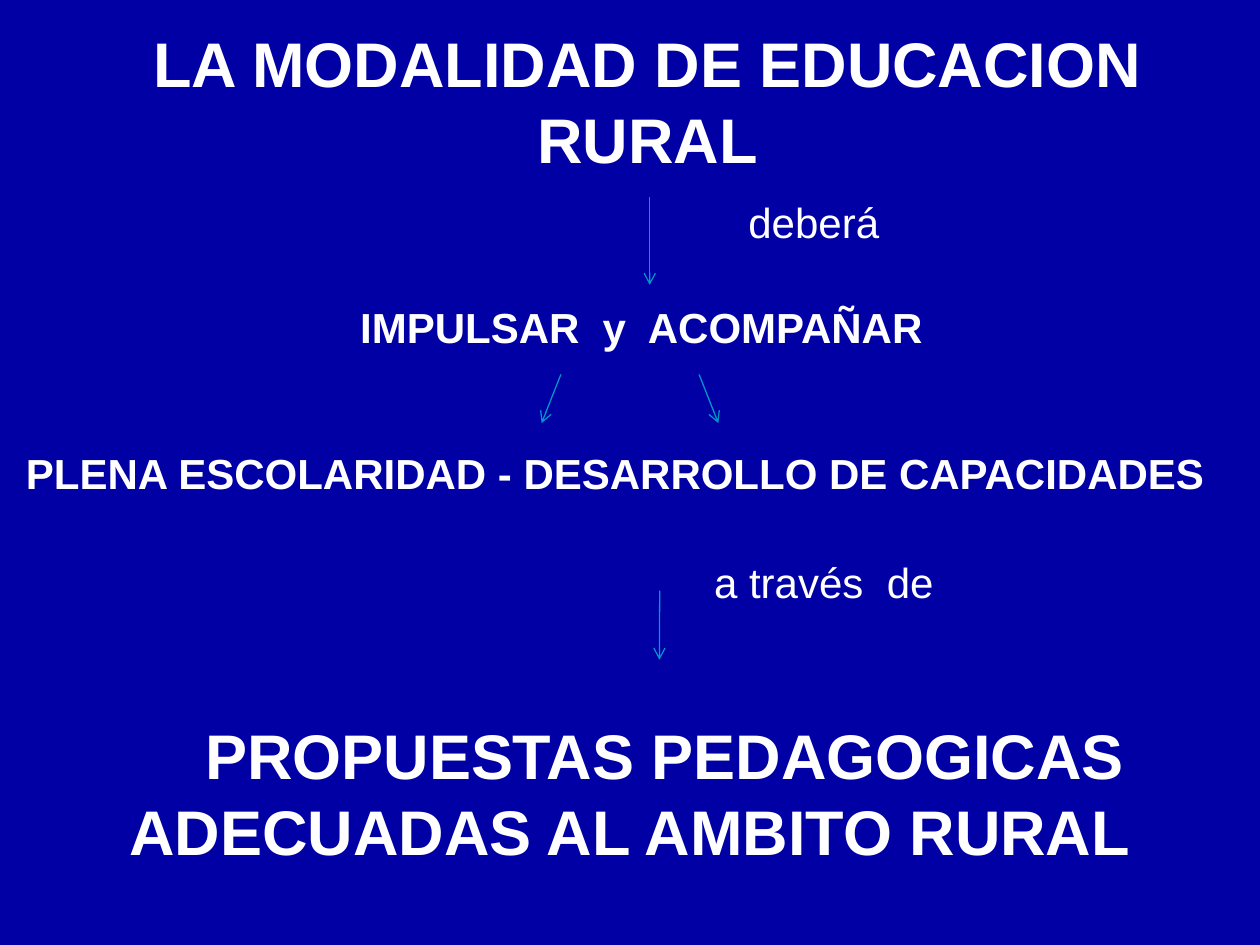
from lxml import etree
from pptx import Presentation
from pptx.dml.color import RGBColor
from pptx.enum.shapes import MSO_CONNECTOR
from pptx.enum.text import MSO_ANCHOR, MSO_AUTO_SIZE, PP_ALIGN
from pptx.oxml.ns import qn
from pptx.util import Pt

STRAIGHT = MSO_CONNECTOR.STRAIGHT
TOP = MSO_ANCHOR.TOP
NO_FIT = MSO_AUTO_SIZE.NONE
LEFT, CENTER = PP_ALIGN.LEFT, PP_ALIGN.CENTER

COLORS = {"background": "0000A4", "text": "FFFFFF", "arrow": "0096C8"}
TITLE_ONLY = 5

HEADING = {"size": Pt(36), "bold": True}
STEP = {"size": Pt(24), "bold": True}
LINK = {"size": Pt(24), "bold": False}
HEADING_LINE = Pt(43.4)

# Each line: text, font, paragraph format, left margin, first-line indent
TITLE_LINES = [
    ("LA MODALIDAD DE EDUCACION RURAL", HEADING,
     {"alignment": CENTER, "line_spacing": HEADING_LINE}, 0, 0),
    ("deberá", LINK,
     {"alignment": CENTER, "line_spacing": Pt(40.5)}, 190, 0),
]
BODY_LINES = [
    ("IMPULSAR  y  ACOMPAÑAR", STEP, {"alignment": CENTER}, 13, 0),
    ("PLENA ESCOLARIDAD - DESARROLLO DE CAPACIDADES", STEP,
     {"alignment": LEFT, "space_before": Pt(54.8)}, 7.8, 0),
    ("a través  de", LINK,
     {"alignment": LEFT, "space_before": Pt(33.4)}, 401, 0),
    ("PROPUESTAS PEDAGOGICAS ADECUADAS AL AMBITO RURAL", HEADING,
     {"alignment": CENTER, "space_before": Pt(62.8),
      "line_spacing": HEADING_LINE}, 0, 40),
]

# Start x, start y, end x, end y
ARROWS = [
    (371.3, 112.5, 371.3, 162.8),
    (320.5, 214, 309.5, 241.8),
    (399.5, 214, 410.5, 241.8),
    (377, 337.5, 376.8, 377),
]


def color(name):
    return RGBColor.from_string(COLORS[name])


def set_values(target, values):
    for name, value in values.items():
        setattr(target, name, value)


def write_lines(shape, lines, top_inset):
    frame = shape.text_frame
    set_values(frame, {"word_wrap": True, "auto_size": NO_FIT,
                       "vertical_anchor": TOP, "margin_top": Pt(top_inset),
                       "margin_bottom": 0})
    for index, (text, font, layout, margin, indent) in enumerate(lines):
        para = frame.paragraphs[0] if index == 0 else frame.add_paragraph()
        set_values(para, {"space_before": Pt(0), "line_spacing": 1.0, **layout})
        properties = para._p.get_or_add_pPr()
        properties.set("marL", str(Pt(margin)))
        properties.set("indent", str(Pt(indent)))
        span = para.add_run()
        span.text = text
        set_values(span.font, {"name": "Arial", **font})
        span.font.color.rgb = color("text")


def place_title(page, left, top, width, height):
    title = page.shapes.title
    set_values(title, {"left": Pt(left), "top": Pt(top),
                       "width": Pt(width), "height": Pt(height)})
    write_lines(title, TITLE_LINES, 0)


def place_body(page, left, top, width, height):
    box = page.shapes.add_textbox(Pt(left), Pt(top), Pt(width), Pt(height))
    write_lines(box, BODY_LINES, 3.6)


def place_arrow(page, *ends):
    arrow = page.shapes.add_connector(STRAIGHT, *[Pt(end) for end in ends])
    arrow.line.color.rgb = color("arrow")
    arrow.line.width = Pt(0.75)
    line = arrow.line._get_or_add_ln()
    etree.SubElement(line, qn("a:tailEnd"), type="arrow")
    etree.SubElement(arrow._element.spPr, qn("a:effectLst"))


def main():
    deck = Presentation()
    deck.slide_width, deck.slide_height = Pt(720), Pt(540)
    page = deck.slides.add_slide(deck.slide_layouts[TITLE_ONLY])
    page.background.fill.solid()
    page.background.fill.fore_color.rgb = color("background")

    # Heading with its linking word, then the steps below
    place_title(page, 54, 13.7, 632, 127)
    place_body(page, 0, 168.5, 720, 371.5)

    # Arrows between the steps
    for ends in ARROWS:
        place_arrow(page, *ends)

    deck.save("out.pptx")


if __name__ == "__main__":
    main()
